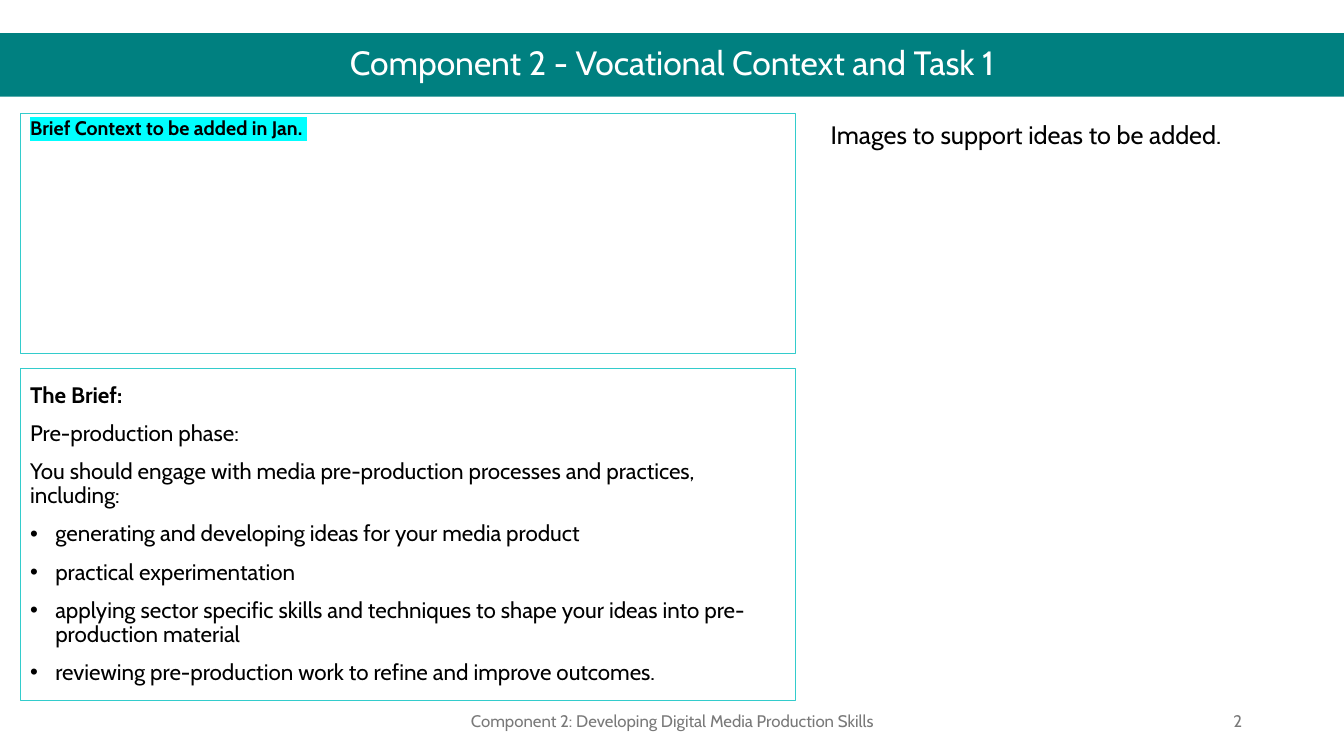
"""Build the Component 2 slide with its vocational context and brief."""
from lxml import etree
from pptx import Presentation, util as u
from pptx.dml.color import RGBColor
from pptx.enum import shapes, text
from pptx.oxml import ns

WIDTH, HEIGHT = u.Inches(13.33), u.Inches(7.5)
FONT = "Cabin"
TEAL = RGBColor(0x00, 0x80, 0x80)
TURQUOISE = RGBColor(0x33, 0xCC, 0xCC)
CYAN = RGBColor(0x00, 0xFF, 0xFF)
GREY = RGBColor(0x79, 0x79, 0x79)
BLACK = RGBColor(0x00, 0x00, 0x00)
WHITE = RGBColor(0xFF, 0xFF, 0xFF)

PANEL_LEFT, PANEL_WIDTH, CONTENT_TOP = 1.5, 57.69, 15.07
FOOTER_TOP, FOOTER_HEIGHT = 92.67, 5.33

BRIEF_INTRO = [
    "Pre-production phase:",
    "You should engage with media pre-production processes and practices, including:",
]
BRIEF_POINTS = [
    "generating and developing ideas for your media product",
    "practical experimentation",
    "applying sector specific skills and techniques to shape your ideas into "
    "pre-production material",
    "reviewing pre-production work to refine and improve outcomes.",
]


def place(left, top, width, height):
    """Turn percentages of the slide into lengths."""
    return (int(WIDTH * left / 100), int(HEIGHT * top / 100),
            int(WIDTH * width / 100), int(HEIGHT * height / 100))


def set_frame(box, anchor):
    """Wrap the text of a box and anchor it."""
    frame = box.text_frame
    frame.word_wrap = True
    frame.vertical_anchor = anchor
    return frame


def add_panel(page, area, anchor, fill=None, line=None):
    """Add a rectangle with an optional fill and outline."""
    box = page.shapes.add_shape(shapes.MSO_SHAPE.RECTANGLE, *place(*area))
    box.shadow.inherit = False
    if fill is None:
        box.fill.background()
    else:
        box.fill.solid()
        box.fill.fore_color.rgb = fill
    if line is None:
        box.line.fill.background()
    else:
        box.line.color.rgb = line
        box.line.width = u.Pt(0.75)
    return set_frame(box, anchor)


def add_label(page, area, words, size, color, align, anchor):
    """Add a text box holding one line."""
    frame = set_frame(page.shapes.add_textbox(*place(*area)), anchor)
    add_para(frame, words, size, color, align=align, spacing=None)


def add_para(frame, words, size, color=BLACK, bold=False,
             align=text.PP_ALIGN.LEFT, spacing=0.9, before=0):
    """Write a paragraph, using the empty first one when it is free."""
    first = frame.paragraphs[0]
    para = frame.add_paragraph() if first.runs else first
    para.alignment = align
    para.line_spacing = spacing
    para.space_before = u.Pt(before)
    span = para.add_run()
    span.text = words
    span.font.name = FONT
    span.font.size = u.Pt(size)
    span.font.bold = bold
    span.font.color.rgb = color
    return para


def add_bullet(para):
    """Give a paragraph a hanging bullet."""
    props = para._p.get_or_add_pPr()
    indent = u.Inches(0.25)
    props.set("marL", str(indent))
    props.set("indent", str(-indent))
    etree.SubElement(props, ns.qn("a:buFont")).set("typeface", "Arial")
    etree.SubElement(props, ns.qn("a:buChar")).set("char", "•")


def highlight(para, color):
    """Mark the first run of a paragraph with a background colour."""
    fill = para.runs[0]._r.rPr.find(ns.qn("a:solidFill"))
    mark = etree.Element(ns.qn("a:highlight"))
    etree.SubElement(mark, ns.qn("a:srgbClr")).set("val", str(color))
    fill.addnext(mark)


def add_brief(page):
    """Add the panel with the brief and its bullet points."""
    frame = add_panel(page, (PANEL_LEFT, 48.8, PANEL_WIDTH, 43.87),
                      text.MSO_ANCHOR.MIDDLE, line=TURQUOISE)
    add_para(frame, "The Brief:", 16, bold=True, before=10)
    for words in BRIEF_INTRO:
        add_para(frame, words, 16, before=10)
    for words in BRIEF_POINTS:
        add_bullet(add_para(frame, words, 16, before=10))


def main():
    """Build and save the slide."""
    align, anchor = text.PP_ALIGN, text.MSO_ANCHOR
    deck = Presentation()
    deck.slide_width, deck.slide_height = WIDTH, HEIGHT
    page = deck.slides.add_slide(deck.slide_layouts[6])

    title = add_panel(page, (0, 4.4, 100, 8.4), anchor.MIDDLE, fill=TEAL)
    add_para(title, "Component 2 - Vocational Context and Task 1", 24, WHITE,
             align=align.CENTER)

    context = add_panel(page, (PANEL_LEFT, CONTENT_TOP, PANEL_WIDTH, 31.73),
                        anchor.TOP, line=TURQUOISE)
    highlight(add_para(context, "Brief Context to be added in Jan. ", 14,
                       bold=True, before=10), CYAN)
    add_brief(page)

    add_label(page, (61.07, CONTENT_TOP, 36.08, 5.33),
              "Images to support ideas to be added.", 18, BLACK,
              align.LEFT, anchor.TOP)
    add_label(page, (33.16, FOOTER_TOP, 33.76, FOOTER_HEIGHT),
              "Component 2: Developing Digital Media Production Skills", 12, GREY,
              align.CENTER, anchor.MIDDLE)
    add_label(page, (70.67, FOOTER_TOP, 22.5, FOOTER_HEIGHT), "2", 12, GREY,
              align.RIGHT, anchor.MIDDLE)
    deck.save("out.pptx")


if __name__ == "__main__":
    main()
